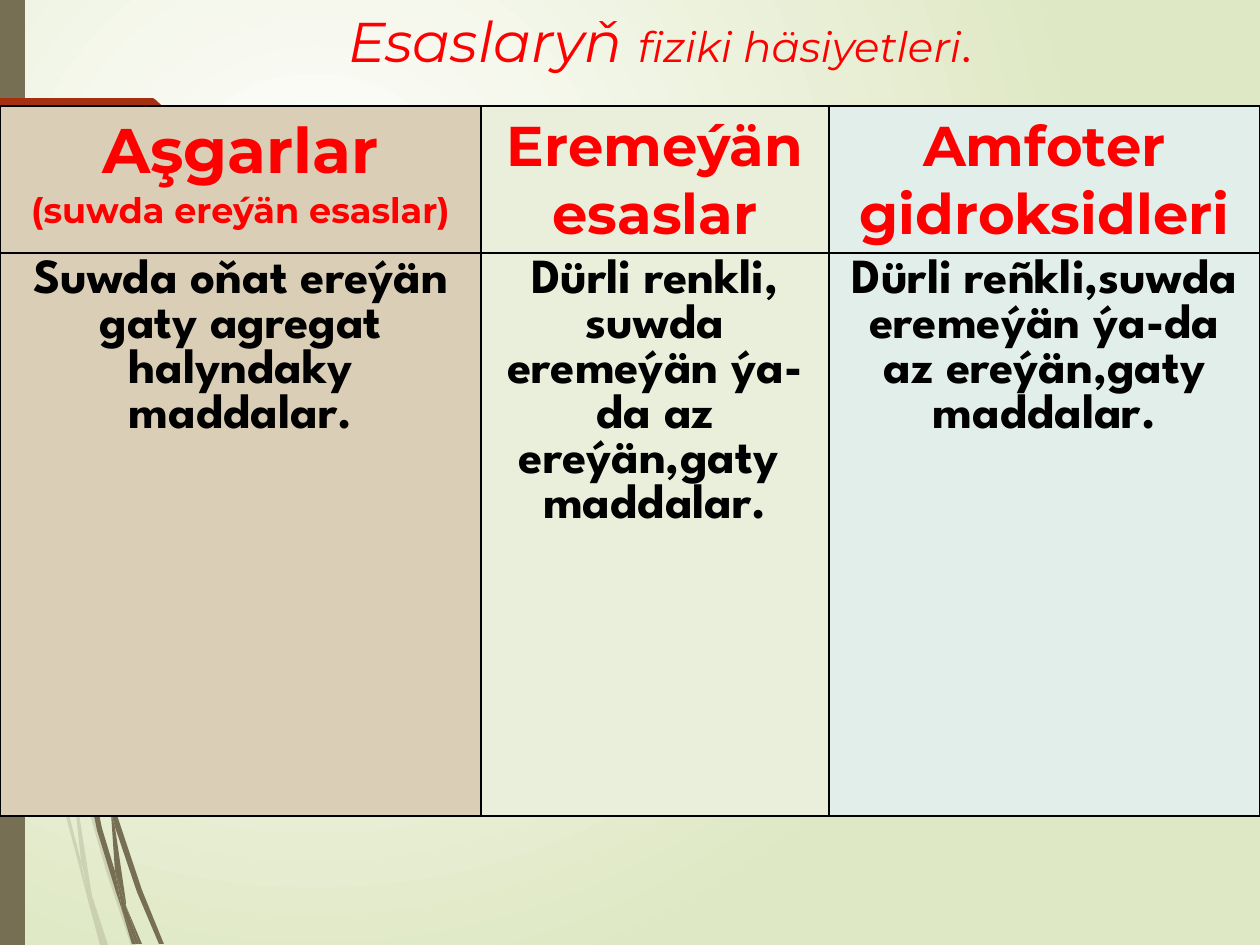
"""Builds a slide comparing the physical properties of three groups of bases."""
from lxml.etree import SubElement
from pptx import Presentation
from pptx.dml.color import RGBColor as RGB
from pptx.enum.shapes import MSO_SHAPE as SHAPE
from pptx.enum.text import MSO_AUTO_SIZE as FIT, PP_ALIGN as ALIGN
from pptx.oxml.ns import qn
from pptx.util import Emu, Pt

PX = 914400 / 126
WIDTH, HEIGHT = 1260, 945
HEADING, BODY = "Montserrat", "League Spartan"
COLORS = {
    "white": "FFFFFF", "glow": "DFE8C4", "olive": "766F54", "tag": "A53010",
    "red": "FF0000", "black": "000000",
    "sand": "DBCEB7", "lime": "EAEFDB", "mint": "E1EEE9",
}
COLUMNS = [(481, "sand"), (348, "lime"), (431, "mint")]
ROWS = [141, 563]
HEADERS = [
    [("Aşgarlar", 36), ("(suwda ereýän esaslar)", 20)],
    [("Eremeýän esaslar", 32)],
    [("Amfoter gidroksidleri", 32)],
]
PROPERTIES = [
    "Suwda oňat ereýän gaty agregat halyndaky maddalar.",
    "Dürli renkli, suwda eremeýän ýa-da az ereýän,gaty  maddalar.",
    "Dürli reñkli,suwda eremeýän ýa-da az ereýän,gaty maddalar.",
]
PALE_WISPS = [
    [(81, 765), (77, 751), (77, 769), (107, 874), (131, 945), (136, 945), (111, 872)],
    [(105, 945), (108, 945), (92, 896)],
    [(81, 861), (60, 780), (28, 591), (15, 474), (10, 441), (24, 592), (57, 782),
     (81, 873), (88, 900), (87, 891)],
    [(73, 755), (76, 814), (81, 861), (84, 872), (92, 896), (91, 890), (79, 814),
     (77, 769), (77, 766)],
    [(88, 900), (100, 945), (103, 945)],
    [(84, 872), (82, 861), (87, 891), (88, 900), (103, 945), (105, 945), (92, 896)],
]
DARK_WISPS = [
    [(118, 818), (115, 808), (115, 827), (137, 892), (159, 944), (164, 944), (142, 890)],
    [(115, 871), (102, 828), (76, 701), (67, 636), (59, 601), (71, 702), (97, 830),
     (116, 892), (122, 910), (121, 903)],
    [(139, 944), (142, 944), (126, 906)],
    [(122, 910), (132, 944), (136, 944)],
    [(111, 813), (115, 871), (121, 890), (126, 906), (126, 902), (115, 827), (113, 820)],
    [(111, 813), (113, 820), (115, 827), (115, 808), (111, 795)],
    [(121, 890), (115, 871), (121, 903), (122, 910), (136, 944), (139, 944), (126, 906)],
]
TAG = [(188, 135), (156, 166), (153, 168), (0, 168), (0, 98), (153, 98), (156, 100), (188, 131)]


def px(length):
    return Emu(round(length * PX))


def rgb(name):
    return RGB.from_string(COLORS[name])


class Board:
    def __init__(self, slide):
        self.slide = slide

    def background(self, center, edge):
        fill = self.slide.background.fill
        fill.gradient()
        for stop, position, name in zip(fill.gradient_stops, (0, 1), (center, edge)):
            stop.position = position
            stop.color.rgb = rgb(name)
        gradient = self.slide.element.find(".//" + qn("a:gradFill"))
        for line in gradient.findall(qn("a:lin")):
            gradient.remove(line)
        circle = SubElement(gradient, qn("a:path"), {"path": "circle"})
        SubElement(circle, qn("a:fillToRect"), l="50000", t="50000", r="100000", b="100000")

    def paint(self, shape, color, opacity=100):
        shape.shadow.inherit = False
        shape.line.fill.background()
        shape.fill.solid()
        shape.fill.fore_color.rgb = rgb(color)
        if opacity < 100:
            tint = shape.fill._xPr.find(".//" + qn("a:srgbClr"))
            SubElement(tint, qn("a:alpha"), val=str(opacity * 1000))

    def rectangle(self, left, top, width, height, color):
        box = map(px, (left, top, width, height))
        self.paint(self.slide.shapes.add_shape(SHAPE.RECTANGLE, *box), color)

    def outline(self, points, color, opacity=100):
        builder = self.slide.shapes.build_freeform(*points[0], scale=PX)
        builder.add_line_segments(points[1:], close=True)
        self.paint(builder.convert_to_shape(), color, opacity)

    def run(self, paragraph, text, size, font, color, bold=False, italic=False):
        paragraph.alignment = ALIGN.CENTER
        run = paragraph.add_run()
        run.text = text
        style = run.font
        style.name, style.size, style.bold, style.italic = font, Pt(size), bold, italic
        style.color.rgb = rgb(color)

    def title(self, left, top, width, height, parts):
        frame = self.slide.shapes.add_textbox(*map(px, (left, top, width, height))).text_frame
        frame.word_wrap = True
        frame.auto_size = FIT.SHAPE_TO_FIT_TEXT
        for text, size, italic in parts:
            self.run(frame.paragraphs[0], text, size, HEADING, "red", italic=italic)

    def cell(self, cell, lines, font, color, fill):
        properties = cell._tc.get_or_add_tcPr()
        for side in ("lnL", "lnR", "lnT", "lnB"):
            border = SubElement(properties, qn("a:" + side), w=str(Pt(1)))
            solid = SubElement(border, qn("a:solidFill"))
            SubElement(solid, qn("a:srgbClr"), val=COLORS["black"])
        cell.fill.solid()
        cell.fill.fore_color.rgb = rgb(fill)
        frame = cell.text_frame
        for index, (text, size) in enumerate(lines):
            paragraph = frame.add_paragraph() if index else frame.paragraphs[0]
            self.run(paragraph, text, size, font, color, bold=True)

    def table(self, left, top, columns, rows, headers, bodies):
        width = sum(column for column, _ in columns)
        box = map(px, (left, top, width, sum(rows)))
        table = self.slide.shapes.add_table(len(rows), len(columns), *box).table
        table.first_row = table.horz_banding = False
        for row, height in zip(table.rows, rows):
            row.height = px(height)
        for index, (column, fill) in enumerate(columns):
            table.columns[index].width = px(column)
            self.cell(table.cell(0, index), headers[index], HEADING, "red", fill)
            self.cell(table.cell(1, index), [(bodies[index], 28)], BODY, "black", fill)


def main():
    deck = Presentation()
    deck.slide_width, deck.slide_height = px(WIDTH), px(HEIGHT)
    board = Board(deck.slides.add_slide(deck.slide_layouts[6]))
    board.background("white", "glow")
    for wisp in PALE_WISPS:
        board.outline(wisp, "olive", 20)
    for wisp in DARK_WISPS:
        board.outline(wisp, "olive")
    board.rectangle(0, 0, 25, HEIGHT, "olive")
    board.outline(TAG, "tag")
    board.title(94, 0, 1132, 81, [
        ("Esaslaryň ", 32, True), ("fiziki häsiyetleri", 24, True), (".", 28, False),
    ])
    board.table(0, 106, COLUMNS, ROWS, HEADERS, PROPERTIES)
    deck.save("out.pptx")


if __name__ == "__main__":
    main()
